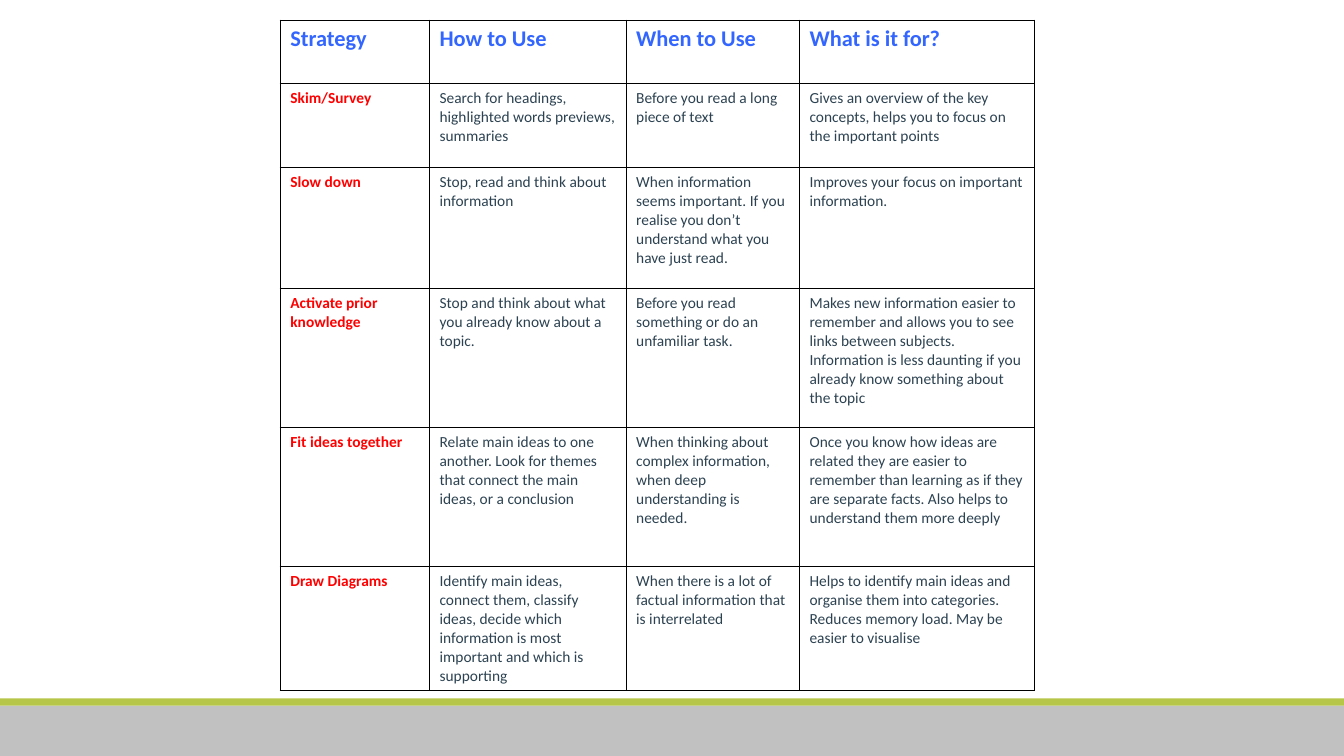
from lxml import etree
from pptx import Presentation
from pptx.dml.color import RGBColor
from pptx.enum.shapes import MSO_SHAPE as SHAPE
from pptx.oxml.ns import qn
from pptx.util import Emu, Pt

WIDTH, HEIGHT = 1333, 750
COLS = [148, 195, 172, 233]
ROWS = [63, 83, 120, 138, 138, 120]
HEADINGS = ["Strategy", "How to Use", "When to Use", "What is it for?"]
STRATEGIES = [
    ["Skim/Survey",
     "Search for headings, highlighted words previews, summaries",
     "Before you read a long piece of text",
     "Gives an overview of the key concepts, helps you to focus on the important points"],
    ["Slow down",
     "Stop, read and think about information",
     "When information seems important. If you realise you don’t understand what you have just read.",
     "Improves your focus on important information."],
    ["Activate prior knowledge",
     "Stop and think about what you already know about a topic.",
     "Before you read something or do an unfamiliar task.",
     "Makes new information easier to remember and allows you to see links between subjects. "
     "Information is less daunting if you already know something about the topic"],
    ["Fit ideas together",
     "Relate main ideas to one another. Look for themes that connect the main ideas, or a conclusion",
     "When thinking about complex information, when deep understanding is needed.",
     "Once you know how ideas are related they are easier to remember than learning as if they "
     "are separate facts. Also helps to understand them more deeply"],
    ["Draw Diagrams",
     "Identify main ideas, connect them, classify ideas, decide which information is most "
     "important and which is supporting",
     "When there is a lot of factual information that is interrelated",
     "Helps to identify main ideas and organise them into categories. Reduces memory load. "
     "May be easier to visualise"],
]


def px(n):
    """Turn px, a hundred to the inch, into EMU."""
    return Emu(n * 9144)


def rgb(color):
    """Turn a hex string into a colour."""
    return RGBColor.from_string(color)


def write(tf, text, size=11, color="2C4251", bold=False):
    """Put one formatted run into a text frame."""
    r = tf.paragraphs[0].add_run()
    r.text = text
    r.font.name = "Calibri"
    r.font.size = Pt(size)
    r.font.bold = bold
    r.font.color.rgb = rgb(color)


def add_bar(s, x, y, w, h, color):
    """Draw a plain filled bar."""
    bar = s.shapes.add_shape(SHAPE.RECTANGLE, px(x), px(y), px(w), px(h))
    bar.shadow.inherit = False
    bar.fill.solid()
    bar.fill.fore_color.rgb = rgb(color)
    bar.line.fill.background()


def add_footer(s, x, y, w, h, stripe=7):
    """Draw the grey footer band under its green stripe."""
    add_bar(s, x, y + stripe, w, h - stripe, "C1C1C1")
    add_bar(s, x, y, w, stripe, "B6C649")


def set_borders(cell, color="000000", width=1):
    """Rule all four sides of a cell."""
    tcPr = cell._tc.get_or_add_tcPr()
    for side in ("lnL", "lnR", "lnT", "lnB"):
        ln = etree.SubElement(tcPr, qn(f"a:{side}"), w=str(Pt(width)))
        fill = etree.SubElement(ln, qn("a:solidFill"))
        etree.SubElement(fill, qn("a:srgbClr"), val=color)


def add_strategies(s, x, y, w, h):
    """Place the table of reading strategies."""
    frame = s.shapes.add_table(len(ROWS), len(COLS), px(x), px(y), px(w), px(h))
    table = frame.table
    table.first_row = table.horz_banding = False
    for col, width in zip(table.columns, COLS):
        col.width = px(width)
    for row, height, texts in zip(table.rows, ROWS, [HEADINGS] + STRATEGIES):
        row.height = px(height)
        for i, (cell, text) in enumerate(zip(row.cells, texts)):
            set_borders(cell)
            cell.fill.background()
            if texts is HEADINGS:
                write(cell.text_frame, text, size=16, color="3366FF", bold=True)
            elif i == 0:
                write(cell.text_frame, text, color="FF0000", bold=True)
            else:
                write(cell.text_frame, text)


def main():
    """Build and save the slide."""
    prs = Presentation()
    prs.slide_width, prs.slide_height = px(WIDTH), px(HEIGHT)
    s = prs.slides.add_slide(prs.slide_layouts[6])
    add_footer(s, 0, 693, WIDTH, HEIGHT - 693)
    add_strategies(s, 278, 20, sum(COLS), sum(ROWS))
    prs.save("out.pptx")


if __name__ == "__main__":
    main()
